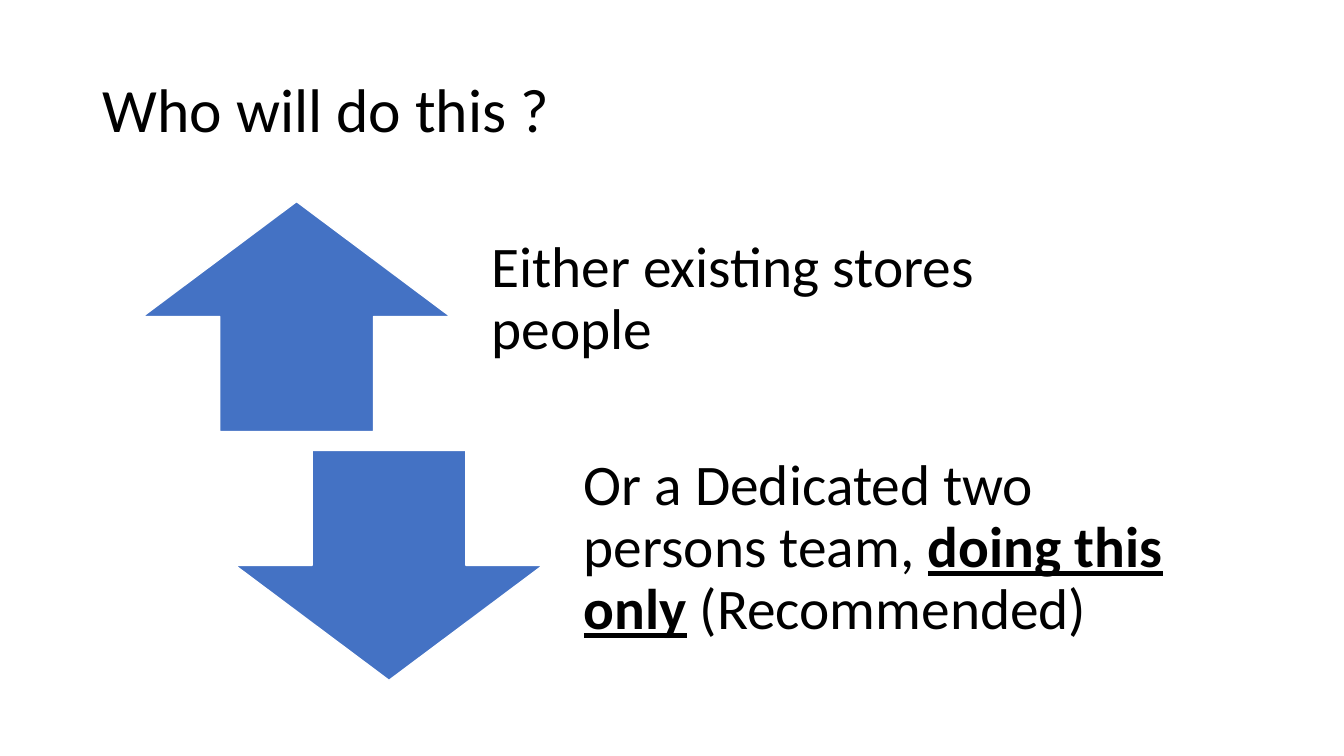
from dataclasses import dataclass

import pptx
import pptx.dml.color
import pptx.enum.shapes
import pptx.enum.text
import pptx.util

EMU_PER_PX = 9525  # 96 px to the inch
SHAPES = pptx.enum.shapes.MSO_SHAPE


@dataclass(frozen=True)
class Theme:
    font: str = "Calibri"
    title_size: int = 44
    option_size: int = 41
    text: str = "000000"
    arrow: str = "4472C4"
    outline: str = "FFFFFF"


THEME = Theme()


def px(length):
    return pptx.util.Emu(length * EMU_PER_PX)


def color(value):
    return pptx.dml.color.RGBColor.from_string(value)


def add_text(slide, box, runs, size, insets):
    """Place one paragraph of (text, emphasized) runs, centred vertically."""
    frame = slide.shapes.add_textbox(*map(px, box)).text_frame
    frame.word_wrap = True
    frame.vertical_anchor = pptx.enum.text.MSO_ANCHOR.MIDDLE
    (frame.margin_left, frame.margin_top,
     frame.margin_right, frame.margin_bottom) = map(px, insets)
    paragraph = frame.paragraphs[0]
    paragraph.line_spacing = 0.9
    paragraph.font.name = THEME.font
    paragraph.font.size = pptx.util.Pt(size)
    paragraph.font.color.rgb = color(THEME.text)
    for text, emphasized in runs:
        run = paragraph.add_run()
        run.text = text
        if emphasized:
            run.font.bold = True
            run.font.underline = True


def add_title(slide, box, text):
    add_text(slide, box, [(text, False)], THEME.title_size, (10, 5, 10, 5))


def add_option(slide, box, arrow_kind, runs):
    """Place an arrow at the left of the box and its text at the right."""
    left, top, width, height = box
    arrow_width, gap = 293, 8

    # Arrow
    arrow = slide.shapes.add_shape(
        arrow_kind, *map(px, (left, top, arrow_width, height)))
    arrow.shadow.inherit = False
    arrow.fill.solid()
    arrow.fill.fore_color.rgb = color(THEME.arrow)
    arrow.line.color.rgb = color(THEME.outline)
    arrow.line.width = pptx.util.Pt(1)

    # Description
    offset = arrow_width + gap
    add_text(slide, (left + offset, top, width - offset, height),
             runs, THEME.option_size, (31, 0, 31, 31))


def add_options(slide, box, options):
    """Stack the options, each stepping right so the last meets the edge."""
    left, top, width, height = box
    step_right, option_height = 88, 219
    steps = len(options) - 1
    step_down = (height - option_height) // steps
    option_width = width - step_right * steps
    for index, (arrow_kind, runs) in enumerate(options):
        option_box = (left + index * step_right, top + index * step_down,
                      option_width, option_height)
        add_option(slide, option_box, arrow_kind, runs)


def main():
    presentation = pptx.Presentation()
    presentation.slide_width = px(1280)
    presentation.slide_height = px(720)
    slide = presentation.slides.add_slide(presentation.slide_layouts[6])

    add_title(slide, (88, 38, 1104, 139), "Who will do this ?")
    add_options(slide, (136, 192, 1007, 456), [
        (SHAPES.UP_ARROW, [("Either existing stores people", False)]),
        (SHAPES.DOWN_ARROW, [
            ("Or a Dedicated two persons team, ", False),
            ("doing this only", True),
            (" (Recommended)", False),
        ]),
    ])
    presentation.save("out.pptx")


if __name__ == "__main__":
    main()
